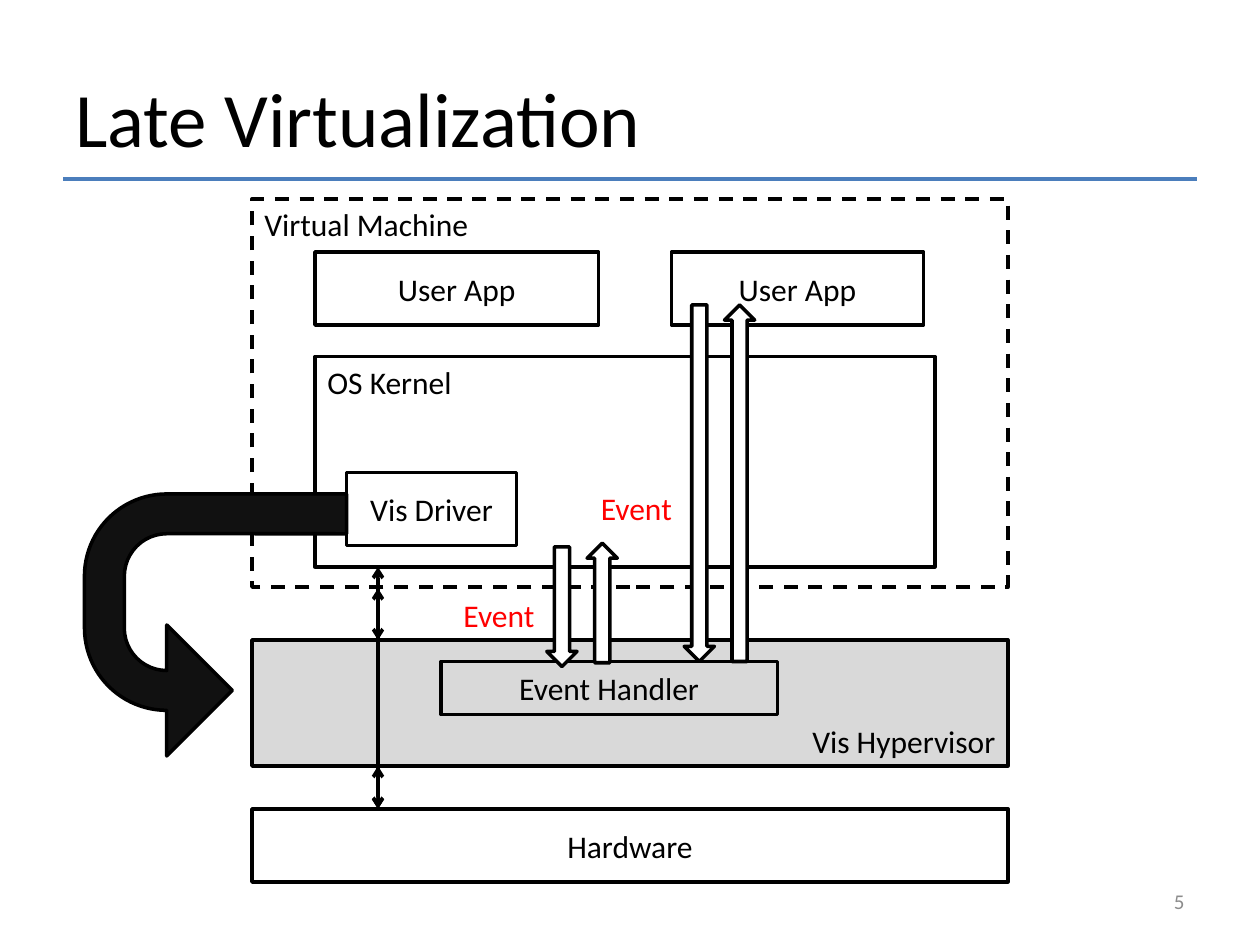
from lxml.etree import SubElement
from pptx import Presentation
from pptx.dml.color import RGBColor
from pptx.enum.dml import MSO_LINE
from pptx.enum.shapes import MSO_CONNECTOR, MSO_SHAPE
from pptx.enum.text import MSO_ANCHOR, PP_ALIGN
from pptx.oxml.ns import qn
from pptx.util import Inches, Pt

BLACK = RGBColor(0x00, 0x00, 0x00)
WHITE = RGBColor(0xFF, 0xFF, 0xFF)
RED = RGBColor(0xFF, 0x00, 0x00)
BLUE = RGBColor(0x4B, 0x7E, 0xBC)
NUMBER_GRAY = RGBColor(0x8C, 0x8C, 0x8C)
HYPERVISOR_GRAY = RGBColor(0xD9, 0xD9, 0xD9)
CHARCOAL = RGBColor(0x11, 0x11, 0x11)
FONT = "Calibri"


def write_text(shape, text, size=18, color=BLACK, align=PP_ALIGN.LEFT,
               anchor=MSO_ANCHOR.TOP, wrap=True):
    """Put one formatted paragraph into a shape."""
    frame = shape.text_frame
    frame.word_wrap = wrap
    frame.vertical_anchor = anchor
    paragraph = frame.paragraphs[0]
    paragraph.alignment = align
    run = paragraph.add_run()
    run.text = text
    run.font.name = FONT
    run.font.size = Pt(size)
    run.font.color.rgb = color


def add_label(slide, box, text, **text_format):
    """Add a text box with one paragraph."""
    label = slide.shapes.add_textbox(*map(Inches, box))
    write_text(label, text, **text_format)


def add_outlined(slide, preset, box, fill=None):
    """Add a preset shape with a black outline and an optional fill."""
    shape = slide.shapes.add_shape(preset, *map(Inches, box))
    shape.shadow.inherit = False
    if fill is None:
        shape.fill.background()
    else:
        shape.fill.solid()
        shape.fill.fore_color.rgb = fill
    shape.line.color.rgb = BLACK
    shape.line.width = Pt(2)
    return shape


def add_block(slide, box, text, fill=None, align=PP_ALIGN.CENTER,
              anchor=MSO_ANCHOR.MIDDLE):
    """Add a labelled rectangle."""
    block = add_outlined(slide, MSO_SHAPE.RECTANGLE, box, fill)
    write_text(block, text, align=align, anchor=anchor)
    return block


def add_line(slide, start, end, color=BLACK, arrows=False):
    """Add a straight line, with arrowheads at both ends on request."""
    line = slide.shapes.add_connector(
        MSO_CONNECTOR.STRAIGHT, *map(Inches, start + end))
    line.line.color.rgb = color
    line.line.width = Pt(2)
    if arrows:
        outline = line.line._get_or_add_ln()
        for tag in ("a:headEnd", "a:tailEnd"):
            SubElement(outline, qn(tag), type="arrow")
    SubElement(line._element.spPr, qn("a:effectLst"))


def add_vertical_arrow(slide, box, rotation):
    """Add a block arrow turned to fill an upright box."""
    left, top, width, height = box
    turned = (left + (width - height) / 2, top + (height - width) / 2,
              height, width)
    arrow = add_outlined(slide, MSO_SHAPE.RIGHT_ARROW, turned, WHITE)
    arrow.rotation = rotation


def draw_header(slide, box):
    """Draw the title and the rule below it."""
    left, top, width, height = box
    add_label(slide, box, "Late Virtualization", size=44,
              anchor=MSO_ANCHOR.MIDDLE)
    rule = top + height - 0.13
    add_line(slide, (left, rule), (left + width, rule), BLUE)


def draw_virtual_machine(slide, box):
    """Draw the dashed machine with its apps, kernel and driver."""
    left, top, width, height = box
    add_block(slide, (left + 0.5, top + 1.25, 4.92, 1.67), "OS Kernel",
              align=PP_ALIGN.LEFT, anchor=MSO_ANCHOR.TOP)
    for offset, app_width in ((0.5, 2.25), (3.33, 2)):
        add_block(slide, (left + offset, top + 0.42, app_width, 0.58),
                  "User App")
    machine = add_block(slide, box, "Virtual Machine",
                        align=PP_ALIGN.LEFT, anchor=MSO_ANCHOR.TOP)
    machine.line.dash_style = MSO_LINE.DASH
    add_block(slide, (left + 0.75, top + 2.17, 1.35, 0.58), "Vis Driver")


def draw_hypervisor(slide, box):
    """Draw the hypervisor with its event handler."""
    left, top, width, height = box
    add_block(slide, box, "Vis Hypervisor", HYPERVISOR_GRAY,
              PP_ALIGN.RIGHT, MSO_ANCHOR.BOTTOM)
    add_block(slide, (left + 1.5, top + 0.17, 2.67, 0.42), "Event Handler")


def draw_event(slide, box, label_left, label_top, rise=0):
    """Draw a down and up arrow pair with its event label."""
    left, top, width, height = box
    add_vertical_arrow(slide, box, 90)
    add_vertical_arrow(slide, (left + 0.32, top - rise, width, height), 270)
    add_label(slide, (label_left, label_top, 0.77, 0.4), "Event",
              color=RED, wrap=False)


def draw_insertion_arrow(slide, box):
    """Draw the U-turn arrow from the driver to the hypervisor."""
    arrow = add_outlined(slide, MSO_SHAPE.U_TURN_ARROW, box, CHARCOAL)
    for index, value in enumerate((0.152, 0.25, 0.25, 0.341, 0.564)):
        arrow.adjustments[index] = value
    arrow.rotation = 270
    arrow._element.spPr.xfrm.set("flipH", "1")


def draw_diagram(slide, box):
    """Stack the layers and connect them."""
    left, top, width, height = box
    add_block(slide, (left, top + height - 0.58, width, 0.58), "Hardware")
    draw_virtual_machine(slide, (left, top, width, 3.08))
    draw_hypervisor(slide, (left, top + 3.5, width, 1))
    for start, end in ((4.5, 4.84), (2.92, 4.84), (3.09, 3.5)):
        add_line(slide, (left + 1, top + start), (left + 1, top + end),
                 arrows=True)
    draw_event(slide, (left + 2.34, top + 2.76, 0.24, 0.95),
               left + 1.58, top + 3.1, rise=0.03)
    draw_event(slide, (left + 3.43, top + 0.84, 0.24, 2.83),
               left + 2.67, top + 2.25)
    draw_insertion_arrow(slide, (left - 1.33, top + 2.34, 2.08, 2.08))


def main():
    """Build and save the slide."""
    presentation = Presentation()
    presentation.slide_width = Inches(10)
    presentation.slide_height = Inches(7.5)
    slide = presentation.slides.add_slide(presentation.slide_layouts[6])
    draw_header(slide, (0.5, 0.3, 9, 1.25))
    draw_diagram(slide, (2, 1.58, 6, 5.42))
    add_label(slide, (7.17, 6.95, 2.33, 0.4), "5", size=12,
              color=NUMBER_GRAY, align=PP_ALIGN.RIGHT,
              anchor=MSO_ANCHOR.MIDDLE)
    presentation.save("out.pptx")


if __name__ == "__main__":
    main()
